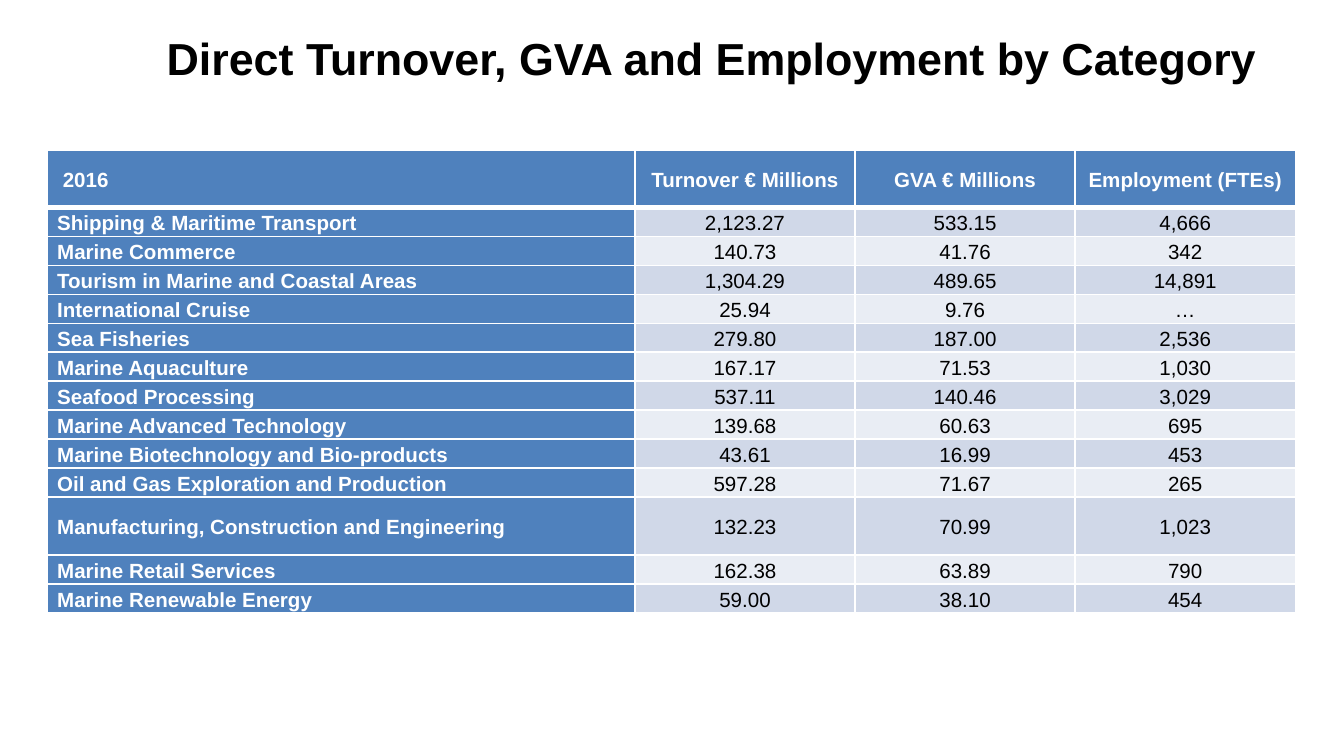
from lxml.etree import SubElement
from pptx import Presentation
from pptx.dml.color import RGBColor
from pptx.enum.text import MSO_ANCHOR, PP_ALIGN
from pptx.oxml.ns import qn
from pptx.util import Cm, Pt

COLOURS = {
    "black": "000000",
    "white": "FFFFFF",
    "blue": "4F81BD",
    "dark band": "D0D8E8",
    "light band": "E9EDF4",
}
HEADINGS = (" 2016", "Turnover € Millions", "GVA € Millions", "Employment (FTEs)")
CATEGORIES = (
    ("Shipping & Maritime Transport", "2,123.27", "533.15", "4,666"),
    ("Marine Commerce", "140.73", "41.76", "342"),
    ("Tourism in Marine and Coastal Areas", "1,304.29", "489.65", "14,891"),
    ("International Cruise", "25.94", "9.76", "…"),
    ("Sea Fisheries", "279.80", "187.00", "2,536"),
    ("Marine Aquaculture", "167.17", "71.53", "1,030"),
    ("Seafood Processing", "537.11", "140.46", "3,029"),
    ("Marine Advanced Technology", "139.68", "60.63", "695"),
    ("Marine Biotechnology and Bio-products", "43.61", "16.99", "453"),
    ("Oil and Gas Exploration and Production", "597.28", "71.67", "265"),
    ("Manufacturing, Construction and Engineering", "132.23", "70.99", "1,023"),
    ("Marine Retail Services", "162.38", "63.89", "790"),
    ("Marine Renewable Energy", "59.00", "38.10", "454"),
)
COLUMN_WIDTHS = (11.1, 4.16, 4.16, 4.16)
ROW_HEIGHT = 0.547
TALL_ROWS = (0, 11)


def apply(target, values):
    for name, value in values.items():
        setattr(target, name, value)


class CategorySlide:
    """Style and current slide, with one method per kind of element."""

    font = "Arial"
    cell_format = {
        "vertical_anchor": MSO_ANCHOR.MIDDLE,
        "margin_left": Cm(0.18),
        "margin_right": Cm(0.18),
        "margin_top": 0,
        "margin_bottom": 0,
    }

    def __init__(self, deck):
        self.page = deck.slides.add_slide(deck.slide_layouts[6])

    def text(self, para, words, size, colour, bold):
        span = para.add_run()
        span.text = words
        apply(span.font, {"name": self.font, "size": Pt(size), "bold": bold})
        span.font.color.rgb = RGBColor.from_string(COLOURS[colour])

    def title(self, words, left, top, width, height):
        box = self.page.shapes.add_textbox(Cm(left), Cm(top), Cm(width), Cm(height))
        apply(box.text_frame, {"word_wrap": True, "vertical_anchor": MSO_ANCHOR.BOTTOM})
        self.text(box.text_frame.paragraphs[0], words, 24, "black", True)

    def borders(self, cell, row):
        properties = cell._tc.get_or_add_tcPr()
        widths = {"lnL": 1, "lnR": 1, "lnT": 3 if row == 1 else 1, "lnB": 3 if row == 0 else 1}
        for side, width in widths.items():
            line = SubElement(properties, qn(f"a:{side}"), w=str(Pt(width)))
            fill = SubElement(line, qn("a:solidFill"))
            SubElement(fill, qn("a:srgbClr"), val=COLOURS["white"])

    def cell(self, cell, words, row, column):
        heading = row == 0 or column == 0
        band = "dark band" if row % 2 else "light band"
        apply(cell, self.cell_format)
        self.borders(cell, row)
        cell.fill.solid()
        cell.fill.fore_color.rgb = RGBColor.from_string(COLOURS["blue" if heading else band])
        para = cell.text_frame.paragraphs[0]
        apply(para, {
            "alignment": PP_ALIGN.CENTER if column else PP_ALIGN.LEFT,
            "line_spacing": 1.15,
            "space_after": Pt(10 if row else 0),
        })
        self.text(para, words, 11, "white" if heading else "black", heading)

    def table(self, rows, left, top):
        heights = [ROW_HEIGHT * (2 if row in TALL_ROWS else 1) for row in range(len(rows))]
        frame = self.page.shapes.add_table(
            len(rows), len(COLUMN_WIDTHS), Cm(left), Cm(top),
            Cm(sum(COLUMN_WIDTHS)), Cm(sum(heights)))
        table = frame.table
        apply(table, {"first_row": True, "first_col": True, "horz_banding": True})
        for column, width in zip(table.columns, COLUMN_WIDTHS):
            column.width = Cm(width)
        for row, (height, entries) in enumerate(zip(heights, rows)):
            table.rows[row].height = Cm(height)
            for column, words in enumerate(entries):
                self.cell(table.cell(row, column), words, row, column)


def main():
    deck = Presentation()
    apply(deck, {"slide_width": Cm(25.4), "slide_height": Cm(14.29)})
    slide = CategorySlide(deck)
    slide.title("Direct Turnover, GVA and Employment by Category", 2.9, 0.38, 21.6, 1.35)
    slide.table((HEADINGS, *CATEGORIES), 0.9, 2.83)
    deck.save("out.pptx")


if __name__ == "__main__":
    main()
